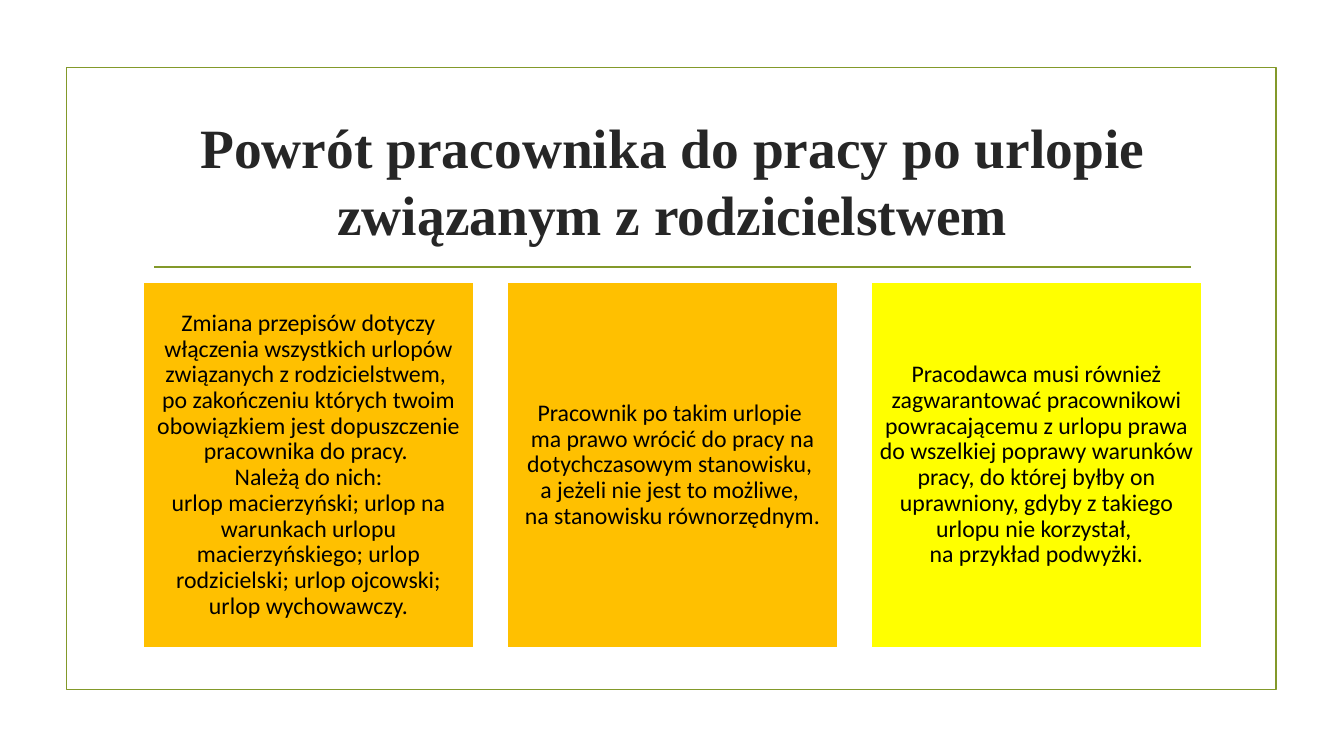
"""Build the slide about returning to work after parental leave."""
from pptx import Presentation
from pptx import util as u
from pptx.dml.color import RGBColor
from pptx.enum import shapes, text
from pptx.oxml.ns import qn
from lxml import etree

COLORS = {"olive": "83992A", "heading": "262626", "body": "000000",
          "amber": "FFC000", "yellow": "FFFF00", "white": "FFFFFF"}


def color(name):
    """Return the named colour."""
    return RGBColor.from_string(COLORS[name])


def write(frame, words, *, font, size, ink, bold=False, spacing=1.0, inset=None):
    """Write one centred paragraph; a newline in words is a line break."""
    frame.word_wrap = True
    frame.auto_size = text.MSO_AUTO_SIZE.NONE
    frame.vertical_anchor = text.MSO_ANCHOR.MIDDLE
    if inset is not None:
        frame.margin_left = frame.margin_right = u.Inches(inset)
        frame.margin_top = frame.margin_bottom = u.Inches(inset)
    paragraph = frame.paragraphs[0]
    paragraph.text = words.replace("\n", "\v")
    paragraph.alignment = text.PP_ALIGN.CENTER
    paragraph.line_spacing = spacing
    for run in paragraph.runs:
        run.font.name = font
        run.font.size = u.Pt(size)
        run.font.bold = bold
        run.font.color.rgb = color(ink)


class LeaveSlide:
    """Hold the slide and its style."""

    heading_font = "Times New Roman"
    body_font = "Calibri"
    line_width = u.Pt(1.25)

    def __init__(self, deck):
        """Add a title-only slide to the deck."""
        self.slide = deck.slides.add_slide(deck.slide_layouts[5])

    def box(self, left, top, width, height, *, line, fill=None):
        """Add a rectangle, hollow unless a fill is named."""
        rectangle = self.slide.shapes.add_shape(
            shapes.MSO_SHAPE.RECTANGLE, *map(u.Inches, (left, top, width, height)))
        rectangle.shadow.inherit = False
        if fill:
            rectangle.fill.solid()
            rectangle.fill.fore_color.rgb = color(fill)
        else:
            rectangle.fill.background()
        rectangle.line.color.rgb = color(line)
        rectangle.line.width = self.line_width
        return rectangle

    def rule(self, left, right, y):
        """Add a horizontal line."""
        divider = self.slide.shapes.add_connector(
            shapes.MSO_CONNECTOR.STRAIGHT, *map(u.Inches, (left, y, right, y)))
        divider.line.color.rgb = color("olive")
        divider.line.width = self.line_width
        etree.SubElement(divider.element.spPr, qn("a:effectLst"))

    def title(self, words, left, top, width, height):
        """Place and fill the title placeholder."""
        heading = self.slide.shapes.title
        heading.left, heading.top = u.Inches(left), u.Inches(top)
        heading.width, heading.height = u.Inches(width), u.Inches(height)
        write(heading.text_frame, words, font=self.heading_font, size=39.6,
              ink="heading", bold=True)

    def card(self, words, fill, left, top, width, height):
        """Add a filled card with its text."""
        panel = self.box(left, top, width, height, line="white", fill=fill)
        write(panel.text_frame, words, font=self.body_font, size=17,
              ink="body", spacing=0.9, inset=0.07)


CARDS = [
    ("Zmiana przepisów dotyczy włączenia wszystkich urlopów związanych "
     "z rodzicielstwem, \npo zakończeniu których twoim obowiązkiem jest "
     "dopuszczenie pracownika do pracy. \nNależą do nich:\n"
     "urlop macierzyński; urlop na warunkach urlopu macierzyńskiego; "
     "urlop rodzicielski; urlop ojcowski; urlop wychowawczy.", "amber"),
    ("Pracownik po takim urlopie \nma prawo wrócić do pracy na "
     "dotychczasowym stanowisku, \na jeżeli nie jest to możliwe, \n"
     "na stanowisku równorzędnym.", "amber"),
    ("Pracodawca musi również zagwarantować pracownikowi powracającemu "
     "z urlopu prawa do wszelkiej poprawy warunków pracy, do której byłby "
     "on uprawniony, gdyby z takiego urlopu nie korzystał, \n"
     "na przykład podwyżki.", "yellow"),
]


def main():
    """Build and save the deck."""
    deck = Presentation()
    deck.slide_width, deck.slide_height = u.Inches(13.33), u.Inches(7.5)
    page = LeaveSlide(deck)
    page.box(0.66, 0.67, 12, 6.17, line="olive")
    page.rule(1.53, 11.81, 2.65)
    page.title("Powrót pracownika do pracy po urlopie związanym z rodzicielstwem",
               1.42, 1.07, 10.5, 1.43)
    card_width, pitch = 3.28, 3.61
    for column, (words, fill) in enumerate(CARDS):
        page.card(words, fill, 1.42 + column * pitch, 2.8, card_width, 3.63)
    deck.save("out.pptx")


if __name__ == "__main__":
    main()
